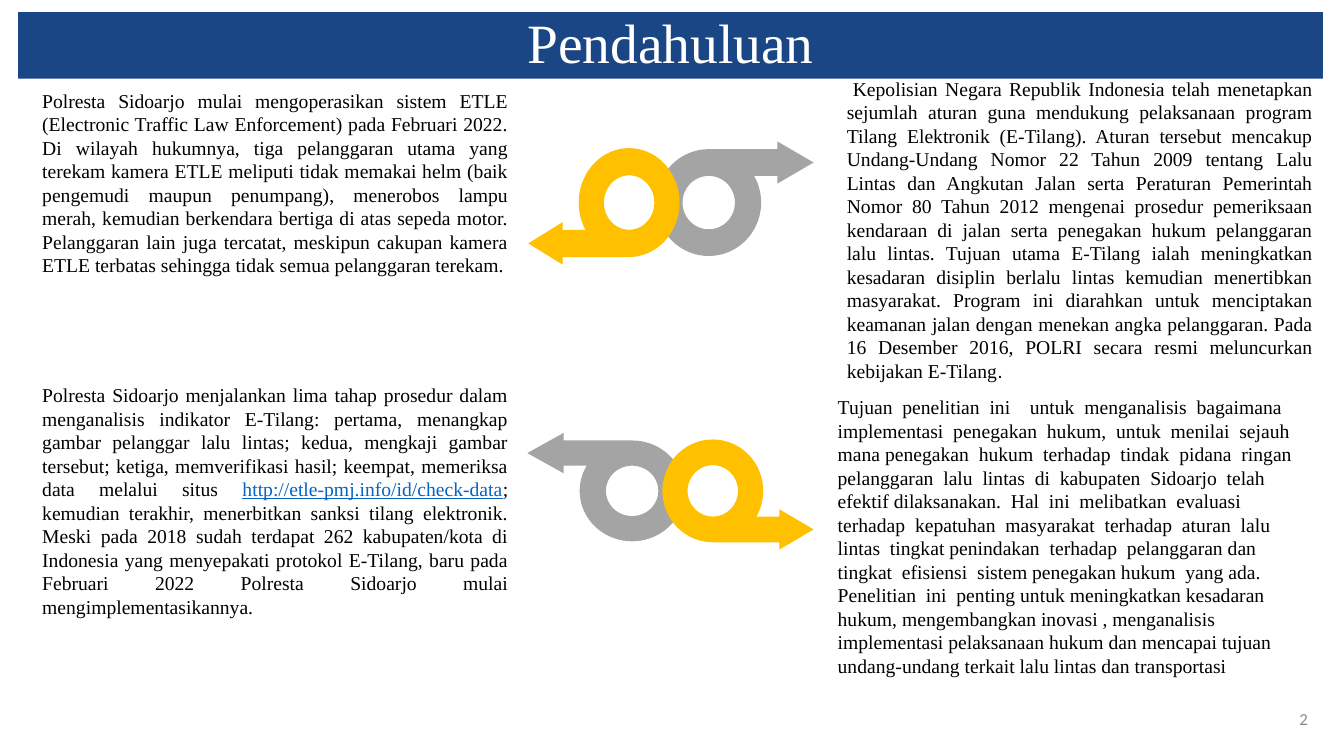
import math
from dataclasses import dataclass

import pptx
import pptx.dml.color
import pptx.enum.text
import pptx.util

Inches = pptx.util.Inches
Align = pptx.enum.text.PP_ALIGN
Anchor = pptx.enum.text.MSO_ANCHOR

COLORS = {
    "banner": "1B4685",
    "white": "FFFFFF",
    "black": "000000",
    "gray": "A4A4A4",
    "yellow": "FFC000",
    "link": "0563C1",
    "number": "888888",
}
SERIF = "Times New Roman"
ARC_STEPS = 60


@dataclass
class Phrase:
    text: str
    color: str = "black"
    font: str = SERIF
    size: float = 14
    underline: bool = False


@dataclass
class TextBlock:
    left: float
    top: float
    width: float
    height: float
    phrases: list[Phrase]
    align: Align = Align.JUSTIFY
    anchor: Anchor = Anchor.TOP
    first_indent: float = 0


@dataclass
class LoopArrow:
    center_x: float
    center_y: float
    radius_x: float
    radius_y: float
    base_x: float
    tip_x: float
    head_half: float
    bar_side: int  # -1 puts the bar above the ring, 1 below it
    color: str


LOOP_ARROWS = [
    LoopArrow(7.03, 2.01, 0.52, 0.53, 7.71, 8.07, 0.21, -1, "gray"),
    LoopArrow(6.24, 2.01, 0.5, 0.54, 5.58, 5.24, 0.21, 1, "yellow"),
    LoopArrow(6.27, 4.87, 0.52, 0.5, 5.59, 5.23, 0.2, -1, "gray"),
    LoopArrow(7.07, 4.87, 0.5, 0.51, 7.73, 8.07, 0.2, 1, "yellow"),
]

TEXT_BLOCKS = [
    TextBlock(8.3, 0.71, 4.82, 3.16, [
        Phrase(
            "Kepolisian Negara Republik Indonesia telah menetapkan sejumlah aturan guna "
            "mendukung pelaksanaan program Tilang Elektronik (E-Tilang). Aturan tersebut "
            "mencakup Undang-Undang Nomor 22 Tahun 2009 tentang Lalu Lintas dan Angkutan "
            "Jalan serta Peraturan Pemerintah Nomor 80 Tahun 2012 mengenai prosedur "
            "pemeriksaan kendaraan di jalan serta penegakan hukum pelanggaran lalu lintas. "
            "Tujuan utama E-Tilang ialah meningkatkan kesadaran disiplin berlalu lintas "
            "kemudian menertibkan masyarakat. Program ini diarahkan untuk menciptakan "
            "keamanan jalan dengan menekan angka pelanggaran. Pada 16 Desember 2016, POLRI "
            "secara resmi meluncurkan kebijakan E-Tilang"),
        Phrase(".", font="Arial"),
    ], first_indent=0.06),
    TextBlock(0.32, 3.75, 4.82, 2.46, [
        Phrase(
            "Polresta Sidoarjo menjalankan lima tahap prosedur dalam menganalisis indikator "
            "E-Tilang: pertama, menangkap gambar pelanggar lalu lintas; kedua, mengkaji "
            "gambar tersebut; ketiga, memverifikasi hasil; keempat, memeriksa data melalui "
            "situs "),
        Phrase("http://etle-pmj.info/id/check-data", "link", underline=True),
        Phrase(
            "; kemudian terakhir, menerbitkan sanksi tilang elektronik. Meski pada 2018 "
            "sudah terdapat 262 kabupaten/kota di Indonesia yang menyepakati protokol "
            "E-Tilang, baru pada Februari 2022 Polresta Sidoarjo mulai "
            "mengimplementasikannya."),
    ]),
    TextBlock(0.32, 0.83, 4.82, 1.99, [
        Phrase(
            "Polresta Sidoarjo mulai mengoperasikan sistem ETLE (Electronic Traffic Law "
            "Enforcement) pada Februari 2022. Di wilayah hukumnya, tiga pelanggaran utama "
            "yang terekam kamera ETLE meliputi tidak memakai helm (baik pengemudi maupun "
            "penumpang), menerobos lampu merah, kemudian berkendara bertiga di atas sepeda "
            "motor. Pelanggaran lain juga tercatat, meskipun cakupan kamera ETLE terbatas "
            "sehingga tidak semua pelanggaran terekam."),
    ]),
    TextBlock(8.21, 3.87, 4.82, 2.93, [
        Phrase(
            "Tujuan  penelitian  ini    untuk  menganalisis  bagaimana implementasi  "
            "penegakan  hukum,  untuk  menilai  sejauh  mana penegakan  hukum  terhadap  "
            "tindak  pidana  ringan  pelanggaran  lalu  lintas  di  kabupaten  Sidoarjo  "
            "telah  efektif dilaksanakan.  Hal  ini  melibatkan  evaluasi  terhadap  "
            "kepatuhan  masyarakat  terhadap  aturan  lalu  lintas  tingkat penindakan  "
            "terhadap  pelanggaran dan tingkat  efisiensi  sistem penegakan hukum  yang "
            "ada.  Penelitian  ini  penting untuk meningkatkan kesadaran hukum, "
            "mengembangkan inovasi , menganalisis implementasi pelaksanaan hukum dan "
            "mencapai tujuan undang-undang terkait lalu lintas dan transportasi"),
    ], align=Align.LEFT),
    TextBlock(12.5, 6.93, 0.57, 0.4, [Phrase("2", "number", "Calibri", 12)],
              align=Align.RIGHT, anchor=Anchor.MIDDLE),
]


def rgb(name: str) -> pptx.dml.color.RGBColor:
    return pptx.dml.color.RGBColor.from_string(COLORS[name])


def place(shape, left: float, top: float, width: float, height: float) -> None:
    shape.left, shape.top = Inches(left), Inches(top)
    shape.width, shape.height = Inches(width), Inches(height)


def format_font(font, name: str, size: float, color: str) -> None:
    font.name = name
    font.size = pptx.util.Pt(size)
    font.color.rgb = rgb(color)


def draw_title(slide, text: str) -> None:
    title = slide.shapes.title
    place(title, 0.18, 0.12, 12.94, 0.66)
    title.fill.solid()
    title.fill.fore_color.rgb = rgb("banner")
    frame = title.text_frame
    frame.text = text
    frame.auto_size = pptx.enum.text.MSO_AUTO_SIZE.NONE
    frame.vertical_anchor = Anchor.MIDDLE
    para = frame.paragraphs[0]
    para.alignment = Align.CENTER
    para.line_spacing = 0.9
    format_font(para.runs[0].font, SERIF, 39.6, "white")


def draw_text(slide, block: TextBlock) -> None:
    box = slide.shapes.add_textbox(
        Inches(block.left), Inches(block.top), Inches(block.width), Inches(block.height))
    frame = box.text_frame
    frame.word_wrap = True
    frame.vertical_anchor = block.anchor
    para = frame.paragraphs[0]
    para.alignment = block.align
    if block.first_indent:
        para._p.get_or_add_pPr().set("indent", str(Inches(block.first_indent)))
    for phrase in block.phrases:
        span = para.add_run()
        span.text = phrase.text
        format_font(span.font, phrase.font, phrase.size, phrase.color)
        if phrase.underline:
            span.font.underline = True


def draw_loop_arrow(slide, arrow: LoopArrow) -> None:
    """Draw a ring whose hole is half its size, with a bar leaving it as an arrow."""
    toward_tip = math.copysign(1, arrow.tip_x - arrow.base_x)

    def row(share: float) -> float:
        return arrow.center_y + arrow.bar_side * arrow.radius_y * share

    def arc(start: float, end: float, scale: float) -> list[tuple[int, int]]:
        angles = [math.radians(start + (end - start) * step / ARC_STEPS)
                  for step in range(ARC_STEPS + 1)]
        return [(Inches(arrow.center_x + toward_tip * arrow.radius_x * scale * math.cos(angle)),
                 Inches(row(scale * math.sin(angle)))) for angle in angles]

    head = [(arrow.base_x, row(1)), (arrow.base_x, row(0.75) + arrow.bar_side * arrow.head_half),
            (arrow.tip_x, row(0.75)), (arrow.base_x, row(0.75) - arrow.bar_side * arrow.head_half),
            (arrow.base_x, row(0.5))]
    outline = arc(30, -270, 1) + [(Inches(x), Inches(y)) for x, y in head]
    hole = arc(0, 360, 0.5)
    builder = slide.shapes.build_freeform(*outline[0])
    builder.add_line_segments(outline[1:], close=True)
    builder.move_to(*hole[0])
    builder.add_line_segments(hole[1:], close=True)
    shape = builder.convert_to_shape()
    shape.shadow.inherit = False
    shape.fill.solid()
    shape.fill.fore_color.rgb = rgb(arrow.color)
    shape.line.fill.background()


def main() -> None:
    deck = pptx.Presentation()
    deck.slide_width, deck.slide_height = Inches(13.33), Inches(7.5)
    page = deck.slides.add_slide(deck.slide_layouts.get_by_name("Title Only"))
    draw_title(page, "Pendahuluan")
    for arrow in LOOP_ARROWS:
        draw_loop_arrow(page, arrow)
    for block in TEXT_BLOCKS:
        draw_text(page, block)
    deck.save("out.pptx")


if __name__ == "__main__":
    main()
